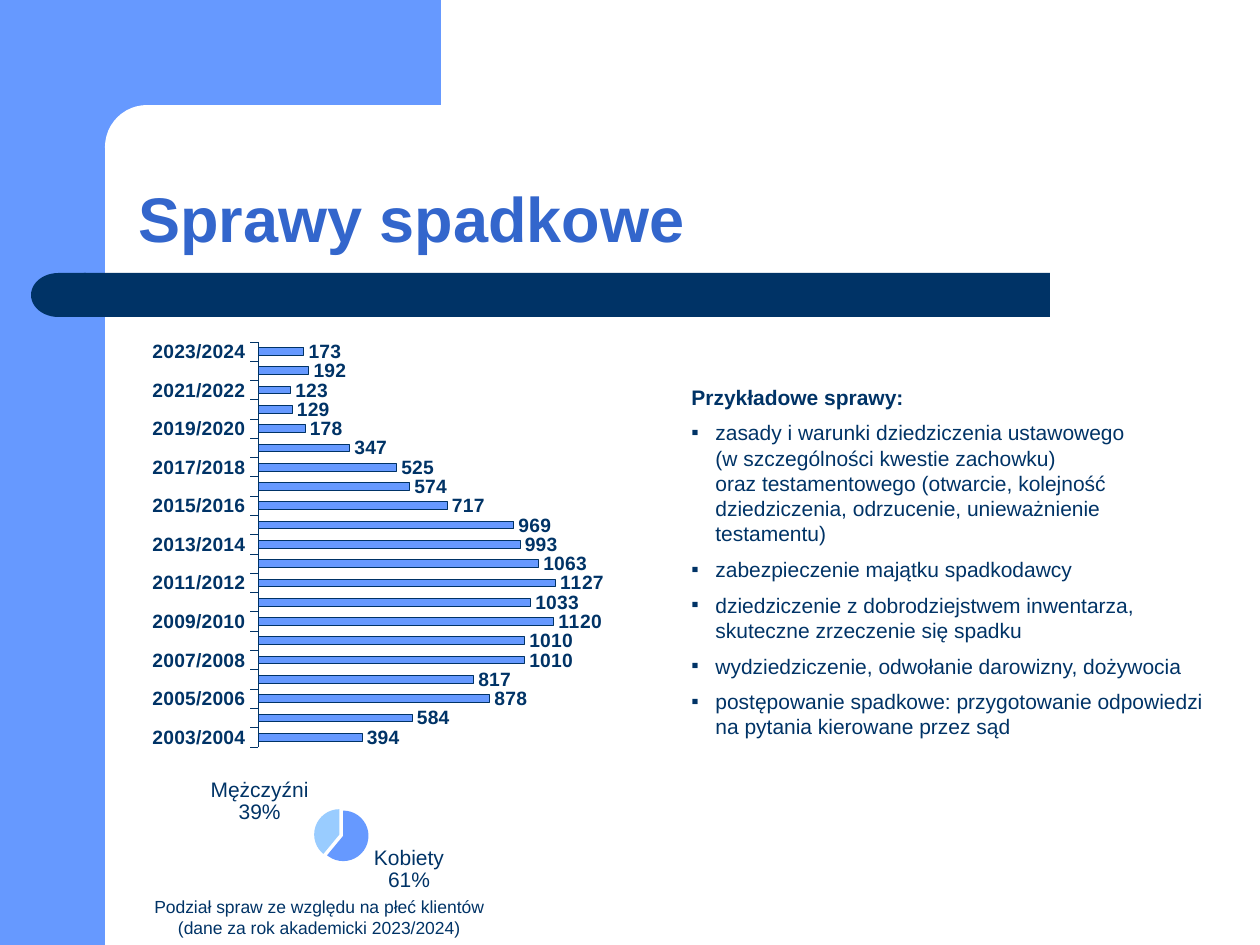
import pptx
import pptx.chart.data
import pptx.dml.color
import pptx.enum.chart
import pptx.enum.shapes
import pptx.enum.text
import pptx.oxml
import pptx.oxml.ns
import pptx.util

HUES = {"blue": "6699FF", "navy": "003366", "royal": "3366CC",
        "sky": "99CCFF", "white": "FFFFFF"}
FONT = "Arial"
SCALE = 914400 / 126
CASES = [394, 584, 878, 817, 1010, 1010, 1120, 1033, 1127, 1063, 993, 969,
         717, 574, 525, 347, 178, 129, 123, 192, 173]
YEARS = [f"{year}/{year + 1}" for year in range(2003, 2003 + len(CASES))]
TOPICS = [
    "zasady i warunki dziedziczenia ustawowego \n(w szczególności kwestie zachowku) \n"
    "oraz testamentowego (otwarcie, kolejność dziedziczenia, odrzucenie, "
    "unieważnienie testamentu)",
    "zabezpieczenie majątku spadkodawcy",
    "dziedziczenie z dobrodziejstwem inwentarza, skuteczne zrzeczenie się spadku",
    "wydziedziczenie, odwołanie darowizny, dożywocia",
    "postępowanie spadkowe: przygotowanie odpowiedzi na pytania kierowane przez sąd",
]
KIND = pptx.enum.shapes.MSO_SHAPE
ALIGN = pptx.enum.text.PP_ALIGN
ANCHOR = pptx.enum.text.MSO_ANCHOR
CHART = pptx.enum.chart


def px(size):
    return round(size * SCALE)


def hue(name):
    return pptx.dml.color.RGBColor.from_string(HUES[name])


def node(tag, **attrs):
    item = pptx.oxml.parse_xml(f"<{tag} {pptx.oxml.ns.nsdecls(tag.split(':')[0])}/>")
    for key, value in attrs.items():
        item.set(key, str(value))
    return item


class Deck:
    """Holds the style and the current slide, and draws each kind of element."""

    def __init__(self, wide, high):
        self.file = pptx.Presentation()
        self.file.slide_width = px(wide)
        self.file.slide_height = px(high)
        self.slide = self.file.slides.add_slide(self.file.slide_layouts[6])

    def font(self, font, size, color="navy", bold=False):
        font.name = FONT
        font.size = pptx.util.Pt(size)
        font.bold = bold
        font.color.rgb = hue(color)

    def shape(self, kind, box, color, round_by=None, flip=False):
        shape = self.slide.shapes.add_shape(kind, *map(px, box))
        shape.shadow.inherit = False
        shape.fill.solid()
        shape.fill.fore_color.rgb = hue(color)
        shape.line.fill.background()
        if round_by is not None:
            shape.adjustments[0] = round_by
        if flip:
            shape._element.spPr.xfrm.set("flipH", "1")

    def text(self, box, lines, size, color="navy", bold=False, align=ALIGN.LEFT,
             anchor=ANCHOR.TOP, gap=0, lead=None):
        frame = self.slide.shapes.add_textbox(*map(px, box)).text_frame
        frame.word_wrap = True
        frame.vertical_anchor = anchor
        for i, line in enumerate(lines):
            para = frame.paragraphs[0] if i == 0 else frame.add_paragraph()
            para.text = line
            para.alignment = align
            para.space_before = pptx.util.Pt(gap)
            if lead:
                para.line_spacing = lead
            for run in para.runs:
                self.font(run.font, size, color, bold)
        return frame

    def bullet(self, para):
        props = para._p.get_or_add_pPr()
        props.set("marL", str(px(24)))
        props.set("indent", str(-px(24)))
        props.append(node("a:buFont", typeface=FONT))
        props.append(node("a:buChar", char="▪"))

    def chart(self, kind, box, names, values, size, plot):
        data = pptx.chart.data.CategoryChartData()
        data.categories = names
        data.add_series("Series 1", values)
        chart = self.slide.shapes.add_chart(kind, *map(px, box), data).chart
        chart.has_legend = chart.has_title = False
        self.font(chart.font, size)
        area = chart._chartSpace.chart.plotArea
        for old in area.findall(pptx.oxml.ns.qn("c:layout")):
            area.remove(old)
        layout, manual = node("c:layout"), node("c:manualLayout")
        marks = [("layoutTarget", "inner"), ("xMode", "edge"), ("yMode", "edge")]
        for tag, value in marks + list(zip("xywh", plot)):
            manual.append(node(f"c:{tag}", val=value))
        layout.append(manual)
        area.insert(0, layout)
        return chart

    def labels(self, plot, size, bold=False):
        plot.has_data_labels = True
        labels = plot.data_labels
        self.font(labels.font, size, bold=bold)
        labels.position = CHART.XL_LABEL_POSITION.OUTSIDE_END
        return labels

    def bars(self, box, names, values, plot):
        chart = self.chart(CHART.XL_CHART_TYPE.BAR_CLUSTERED, box, names, values, 11, plot)
        bars = chart.plots[0]
        bars.gap_width = 150
        bars.vary_by_categories = False
        fmt = bars.series[0].format
        fmt.fill.solid()
        fmt.fill.fore_color.rgb = hue("blue")
        fmt.line.color.rgb = hue("navy")
        fmt.line.width = pptx.util.Pt(0.25)
        self.labels(bars, 11, True).show_value = True
        axis = chart.category_axis
        axis.major_tick_mark = CHART.XL_TICK_MARK.OUTSIDE
        self.font(axis.tick_labels.font, 11, bold=True)
        axis.format.line.color.rgb = hue("navy")
        axis.format.line.width = pptx.util.Pt(0.15)
        scale = chart.value_axis
        scale.minimum_scale, scale.maximum_scale = 0, 1200
        scale.has_major_gridlines = scale.visible = False

    def pie(self, box, names, values, colors, plot):
        chart = self.chart(CHART.XL_CHART_TYPE.PIE, box, names, values, 12, plot)
        pie = chart.plots[0]
        series = pie.series[0]
        for i, color in enumerate(colors):
            fmt = series.points[i].format
            fmt.fill.solid()
            fmt.fill.fore_color.rgb = hue(color)
            fmt.line.fill.background()
        first = series._element.find(pptx.oxml.ns.qn("c:dPt"))
        first.addprevious(node("c:explosion", val=8))
        labels = self.labels(pie, 12)
        labels.show_value = False
        labels.show_percentage = labels.show_category_name = True
        split = node("c:separator")
        split.text = "\n"
        bubble = labels._element.find(pptx.oxml.ns.qn("c:showBubbleSize"))
        bubble.addnext(split)


def main():
    deck = Deck(1260, 945)
    deck.shape(KIND.RECTANGLE, (0, 0, 105, 945), "blue")
    deck.shape(KIND.RECTANGLE, (95, 0, 346, 147), "blue")
    deck.shape(KIND.ROUNDED_RECTANGLE, (105, 105, 703, 84), "white", 0.5)
    deck.shape(KIND.ROUNDED_RECTANGLE, (84, 273, 966, 44), "navy", 0)
    deck.shape(KIND.FLOWCHART_DELAY, (31, 273, 55, 44), "navy", flip=True)
    deck.text((126, 105, 1103, 157), ["Sprawy spadkowe"], 36, "royal", True,
              anchor=ANCHOR.BOTTOM, lead=0.9)
    body = deck.text((679, 378, 546, 382), ["Przykładowe sprawy:"] + TOPICS, 12, gap=6)
    head, *items = body.paragraphs
    head.runs[0].font.bold = True
    for item in items:
        deck.bullet(item)
    deck.bars((105, 304, 546, 471), YEARS, CASES, (0.28, 0.08, 0.58, 0.86))
    deck.pie((52, 760, 546, 149), ["Kobiety", "Mężczyźni"], [61, 39],
             ["blue", "sky"], (0.48, 0.32, 0.1, 0.37))
    deck.text((123, 890, 392, 55), ["Podział spraw ze względu na płeć klientów "
              "(dane za rok akademicki 2023/2024)"], 10, align=ALIGN.CENTER, gap=5)
    deck.file.save("out.pptx")


if __name__ == "__main__":
    main()
